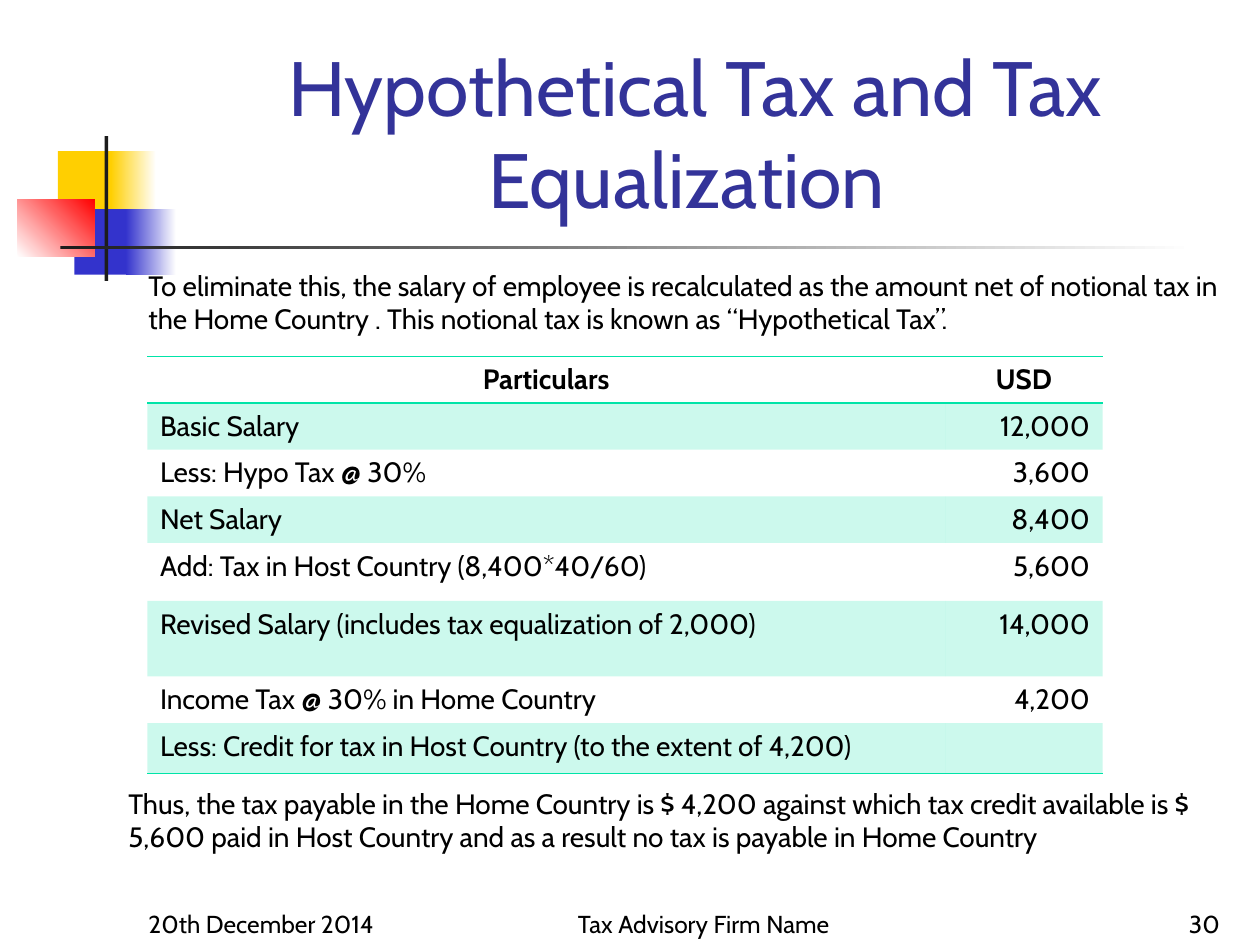
"""Build the slide on hypothetical tax and tax equalization."""
import lxml.etree
import pptx
import pptx.dml.color
import pptx.enum.shapes
import pptx.enum.text
import pptx.oxml.ns
import pptx.util

Inches = pptx.util.Inches
Align = pptx.enum.text.PP_ALIGN
Anchor = pptx.enum.text.MSO_ANCHOR
qn = pptx.oxml.ns.qn


def paint(fill, start, end=None, angle=0):
    if end is None:
        fill.solid()
        fill.fore_color.rgb = pptx.dml.color.RGBColor.from_string(start)
        return
    fill.gradient()
    fill.gradient_angle = angle
    for stop, color in zip(fill.gradient_stops, (start, end)):
        stop.color.rgb = pptx.dml.color.RGBColor.from_string(color)


def write_text(frame, text, size=16, color="000000", bold=False,
               align=Align.LEFT, anchor=Anchor.TOP):
    frame.word_wrap = True
    frame.vertical_anchor = anchor
    paragraph = frame.paragraphs[0]
    paragraph.alignment = align
    run = paragraph.add_run()
    run.text = text
    run.font.name = "Cabin"
    run.font.size = pptx.util.Pt(size)
    run.font.bold = bold
    paint(run.font.fill, color)


deck = pptx.Presentation()
deck.slide_width, deck.slide_height = Inches(10), Inches(7.5)
slide = deck.slides.add_slide(deck.slide_layouts[5])

ornaments = [
    ((0.46, 1.2, 0.48, 0.52), ("FFCF01",)),
    ((0.88, 1.2, 0.36, 0.52), ("FFCF01", "FFFFFF")),
    ((0.59, 1.66, 0.46, 0.52), ("3333CC",)),
    ((1, 1.66, 0.4, 0.52), ("3333CC", "FFFFFF")),
    ((0.14, 1.58, 0.61, 0.46), ("FFFFFF", "FF0000", 45)),
    ((0.83, 1.08, 0.03, 1.15), ("1C1C1C",)),
    ((0.48, 1.95, 9, 0.03), ("1C1C1C", "FFFFFF")),
]
for box, colors in ornaments:
    ornament = slide.shapes.add_shape(
        pptx.enum.shapes.MSO_SHAPE.RECTANGLE, *map(Inches, box))
    ornament.shadow.inherit = False
    ornament.line.fill.background()
    paint(ornament.fill, *colors)

title = slide.shapes.title
title.left, title.top, title.width, title.height = map(Inches, (1.26, 0.23, 8.52, 1.6))
title.text_frame.auto_size = pptx.enum.text.MSO_AUTO_SIZE.NONE
write_text(title.text_frame, "Hypothetical Tax and Tax Equalization ", size=44,
           color="333399", align=Align.CENTER, anchor=Anchor.BOTTOM)

footer = {"size": 14, "anchor": Anchor.BOTTOM}
passages = [
    ((1.08, 2.08, 8.75, 0.64),
     "To eliminate this, the salary of employee is recalculated as the amount net of "
     "notional tax in the Home Country . This notional tax is known as “Hypothetical Tax”.",
     {}),
    ((0.92, 6.19, 8.75, 0.91),
     "Thus, the tax payable in the Home Country is $ 4,200 against which tax credit "
     "available is $ 5,600 paid in Host Country and as a result no tax is payable in "
     "Home Country", {}),
    ((1.08, 7, 2.08, 0.5), "20th December 2014", footer),
    ((4, 7, 3.17, 0.5), "Tax Advisory Firm Name", {**footer, "align": Align.CENTER}),
    ((7.7, 7, 2.08, 0.5), "30", {**footer, "align": Align.RIGHT}),
]
for box, text, style in passages:
    passage = slide.shapes.add_textbox(*map(Inches, box))
    write_text(passage.text_frame, text, **style)

salary_rows = [
    ("Particulars", "USD", 0.37),
    ("Basic Salary", "12,000", 0.37),
    ("Less: Hypo Tax @ 30%", "3,600", 0.37),
    ("Net Salary", "8,400", 0.37),
    ("Add: Tax in Host Country (8,400*40/60)", "5,600", 0.46),
    ("Revised Salary (includes tax equalization of 2,000)", "14,000", 0.6),
    ("Income Tax @ 30% in Home Country", "4,200", 0.37),
    ("Less: Credit for tax in Host Country (to the extent of 4,200)", "", 0.37),
]
salary = slide.shapes.add_table(
    len(salary_rows), 2, Inches(1.17), Inches(2.83), Inches(7.58), Inches(3.28)).table
salary.first_row = salary.horz_banding = False
salary._tbl.tblPr.find(qn("a:tableStyleId")).text = "{2D5ABB26-0587-4C30-8999-92F81FD0307C}"
salary.columns[0].width, salary.columns[1].width = Inches(6.33), Inches(1.25)

borders = {0: ("a:lnT", "a:lnB"), len(salary_rows) - 1: ("a:lnB",)}
for row, (label, amount, height) in enumerate(salary_rows):
    salary.rows[row].height = Inches(height)
    for column, text in enumerate((label, amount)):
        cell = salary.cell(row, column)
        align = Align.CENTER if row == 0 else (Align.LEFT, Align.RIGHT)[column]
        write_text(cell.text_frame, text, bold=row == 0, align=align)
        properties = cell._tc.get_or_add_tcPr()
        for side in borders.get(row, ()):
            border = lxml.etree.SubElement(properties, qn(side), w="12700")
            solid = lxml.etree.SubElement(border, qn("a:solidFill"))
            lxml.etree.SubElement(solid, qn("a:srgbClr"), val="00E4A8")
        if row % 2:
            paint(cell.fill, "00E4A8")
            tint = properties.find(qn("a:solidFill")).find(qn("a:srgbClr"))
            lxml.etree.SubElement(tint, qn("a:alpha"), val="20000")
        else:
            cell.fill.background()

deck.save("out.pptx")
